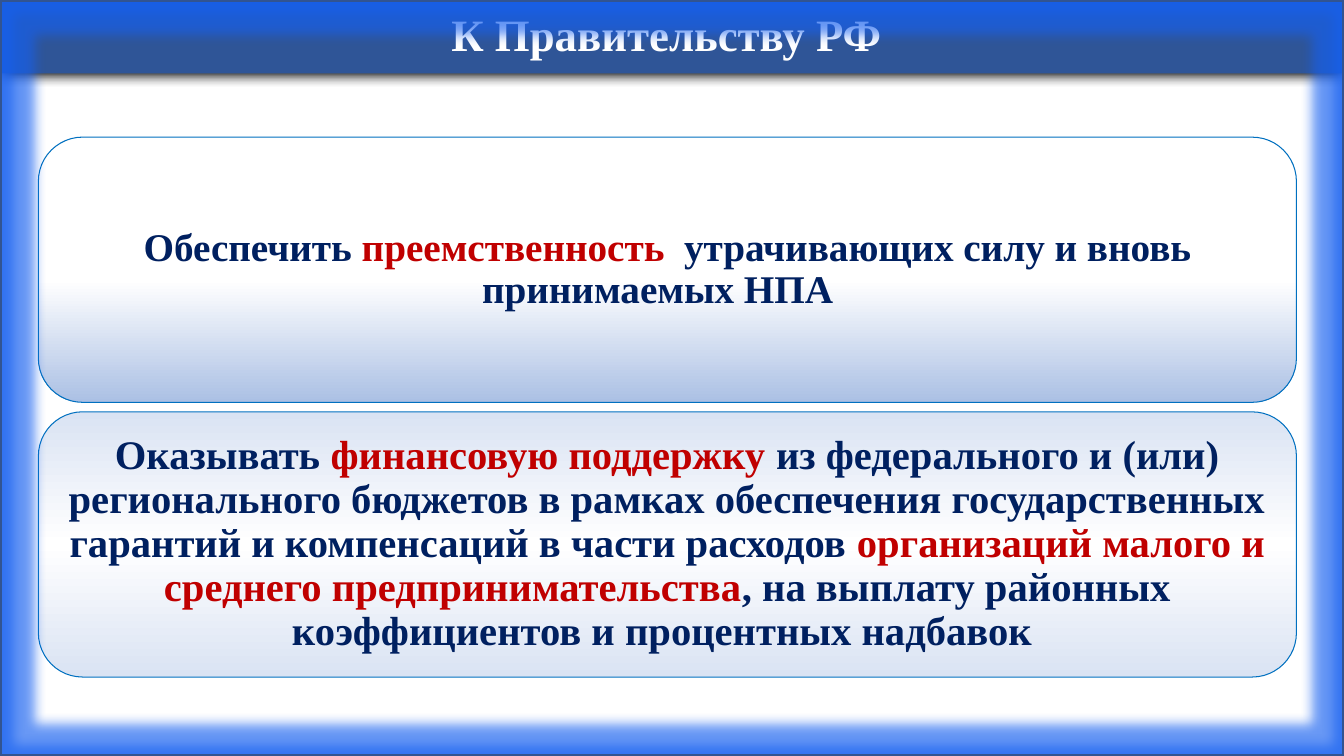
from lxml import etree
from pptx import Presentation
from pptx.dml.color import RGBColor
from pptx.enum.shapes import MSO_SHAPE
from pptx.enum.text import MSO_ANCHOR, PP_ALIGN
from pptx.oxml.ns import qn
from pptx.util import Pt

RECT, ROUND = MSO_SHAPE.RECTANGLE, MSO_SHAPE.ROUNDED_RECTANGLE
MIDDLE, CENTER = MSO_ANCHOR.MIDDLE, PP_ALIGN.CENTER
FONT = "Times New Roman"
W, H = 960, 540
COLORS = {
    "white": "FFFFFF", "banner": "2F5597", "shadow": "000000",
    "text": "002060", "accent": "C00000", "card_line": "0070C0",
    "card_blue": "ABC0E4", "card_pale": "DAE3F3",
    "frame": "325491", "glow": "1660F0",
}


def rgb(name):
    return RGBColor.from_string(COLORS[name])


def add_box(slide, kind, box):
    sp = slide.shapes.add_shape(kind, *(Pt(v) for v in box))
    sp.shadow.inherit = False
    return sp


def add_color(parent, name, alpha=100):
    clr = etree.SubElement(parent, qn("a:srgbClr"), val=COLORS[name])
    if alpha < 100:
        etree.SubElement(clr, qn("a:alpha"), val=str(alpha * 1000))


def add_effect(sp, tag, color, alpha=100, **attrs):
    effects = sp.element.spPr.find(qn("a:effectLst"))
    effect = etree.SubElement(effects, qn(tag), {k: str(v) for k, v in attrs.items()})
    add_color(effect, color, alpha)


def set_gradient(sp, stops):
    sp.fill.gradient()
    sp.fill.gradient_angle = 270  # top to bottom
    stop_list = sp.element.spPr.find(qn("a:gradFill")).find(qn("a:gsLst"))
    for old in list(stop_list):
        stop_list.remove(old)
    for position, color in stops:
        add_color(etree.SubElement(stop_list, qn("a:gs"), pos=str(position * 1000)), color)


def set_text(sp, runs, size, inset):
    tf = sp.text_frame
    tf.word_wrap = True
    tf.vertical_anchor = MIDDLE
    tf.margin_left = tf.margin_right = tf.margin_top = tf.margin_bottom = Pt(inset)
    p = tf.paragraphs[0]
    p.alignment = CENTER
    p.line_spacing = 0.9
    p.font.name, p.font.size, p.font.bold = FONT, Pt(size), True
    for text, color in runs:
        r = p.add_run()
        r.text = text
        r.font.color.rgb = rgb(color)


def add_banner(slide, box, title):
    sp = add_box(slide, RECT, box)
    sp.fill.solid()
    sp.fill.fore_color.rgb = rgb("banner")
    sp.line.fill.background()
    add_effect(sp, "a:outerShdw", "shadow", blurRad=Pt(8.5), dist=Pt(1), dir=90 * 60000)
    set_text(sp, [(title, "white")], 32, 3.6)


def add_cards(slide, box, gap, cards):
    left, top, width, height = box
    card_height = (height - gap * (len(cards) - 1)) / len(cards)
    for i, (stops, size, runs) in enumerate(cards):
        sp = add_box(slide, ROUND, (left, top + i * (card_height + gap), width, card_height))
        set_gradient(sp, stops)
        sp.line.color.rgb = rgb("card_line")
        sp.line.width = Pt(0.75)
        set_text(sp, runs, size, 8.5)


def add_frame(slide, box):
    sp = add_box(slide, RECT, box)
    sp.fill.background()
    sp.line.color.rgb = rgb("frame")
    sp.line.width = Pt(2.25)
    add_effect(sp, "a:glow", "glow", alpha=65, rad=Pt(18))


CARDS = [
    ([(0, "white"), (54, "white"), (100, "card_blue")], 28, [
        ("Обеспечить ", "text"),
        ("преемственность", "accent"),
        ("  утрачивающих силу и вновь принимаемых НПА  ", "text"),
    ]),
    ([(0, "card_pale"), (50, "white"), (100, "card_pale")], 29, [
        ("Оказывать", "text"),
        (" финансовую поддержку ", "accent"),
        ("из федерального и (или) регионального бюджетов в рамках обеспечения "
         "государственных гарантий и компенсаций в части расходов ", "text"),
        ("организаций малого и среднего предпринимательства", "accent"),
        (", на выплату районных коэффициентов и процентных надбавок ", "text"),
    ]),
]


def main():
    prs = Presentation()
    prs.slide_width, prs.slide_height = Pt(W), Pt(H)
    slide = prs.slides.add_slide(prs.slide_layouts[6])
    add_banner(slide, (0, 0, W, 52.5), "К Правительству РФ ")
    add_cards(slide, (27.4, 98, 898.6, 385.6), 6.8, CARDS)
    # Glowing border over everything
    add_frame(slide, (0, 0, W, H))
    prs.save("out.pptx")


if __name__ == "__main__":
    main()
